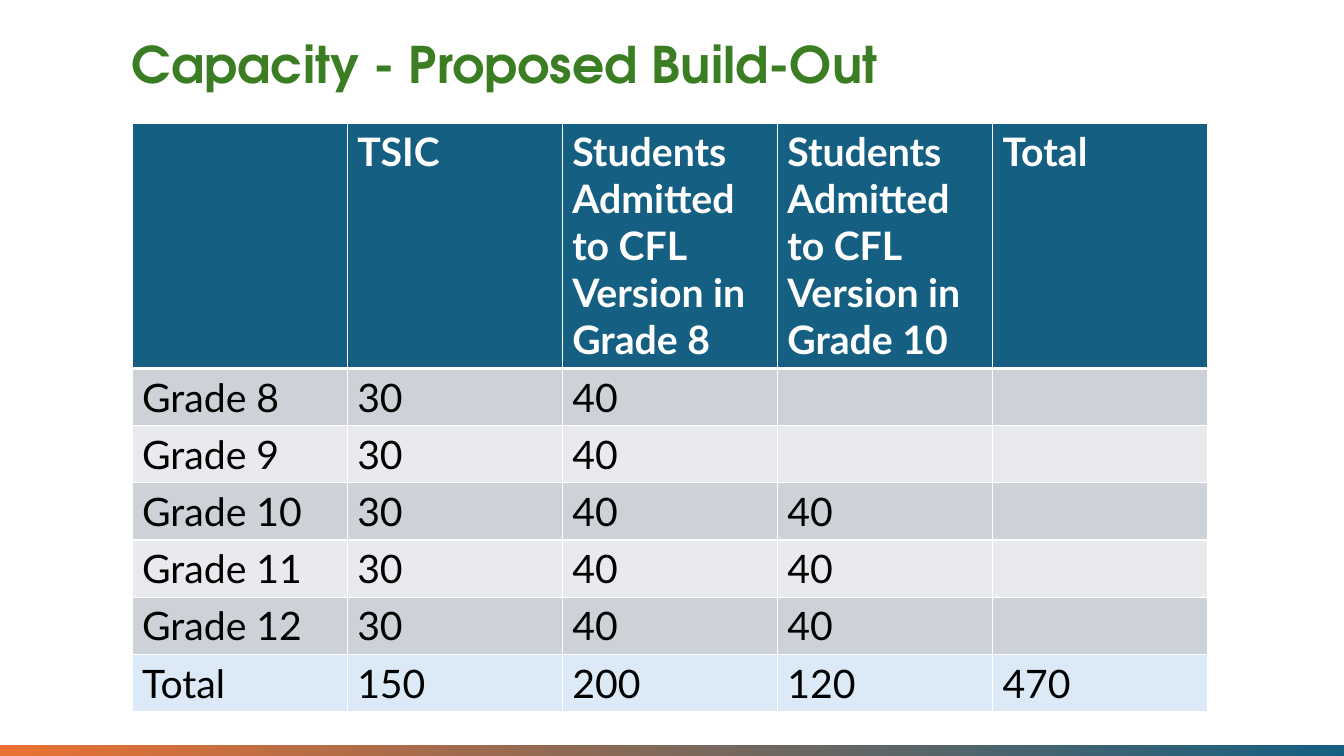
"""Build the capacity build-out slide."""
import dataclasses

import pptx
import pptx.dml.color
import pptx.enum.shapes
import pptx.enum.text
import pptx.oxml
import pptx.oxml.ns
import pptx.util

Cm = pptx.util.Cm
Pt = pptx.util.Pt


@dataclasses.dataclass(frozen=True)
class Theme:
    """Colours, fonts and sizes of the slide."""
    orange: str = "E97132"
    teal: str = "156082"
    green: str = "3B7D23"
    white: str = "FFFFFF"
    black: str = "000000"
    bands: tuple = ("CCD2D8", "E8EAED")
    total: str = "DCEAF7"
    title_font: str = "TeX Gyre Adventor"
    table_font: str = "Lato"
    title_size: int = 36
    table_size: int = 28
    thin: int = 1
    thick: int = 3


def rgb(value):
    """Return a colour from its hexadecimal value."""
    return pptx.dml.color.RGBColor.from_string(value)


class CapacitySlide:
    """Draw styled elements on one slide."""

    def __init__(self, slide, theme):
        """Keep the slide and its theme."""
        self.slide = slide
        self.theme = theme

    def style(self, text_frame, font_name, size, color, bold):
        """Format every run of a text frame."""
        for paragraph in text_frame.paragraphs:
            for run in paragraph.runs:
                run.font.name = font_name
                run.font.size = Pt(size)
                run.font.bold = bold
                run.font.color.rgb = rgb(color)

    def gradient_bar(self, left, top, width, height):
        """Add a bar that fades from orange to teal."""
        rectangle = pptx.enum.shapes.MSO_SHAPE.RECTANGLE
        shape = self.slide.shapes.add_shape(rectangle, left, top, width, height)
        shape.shadow.inherit = False
        shape.line.fill.background()
        shape.fill.gradient()
        shape.fill.gradient_angle = 0
        colors = (self.theme.orange, self.theme.teal)
        for stop, color in zip(shape.fill.gradient_stops, colors):
            stop.color.rgb = rgb(color)

    def title(self, text, left, top, width, height):
        """Add the slide title."""
        text_frame = self.slide.shapes.add_textbox(left, top, width, height).text_frame
        text_frame.word_wrap = True
        text_frame.vertical_anchor = pptx.enum.text.MSO_ANCHOR.TOP
        text_frame.text = text
        text_frame.paragraphs[0].line_spacing = 0.9
        self.style(text_frame, self.theme.title_font, self.theme.title_size,
                   self.theme.green, True)

    def borders(self, cell, top, bottom):
        """Set white borders with the given top and bottom widths."""
        properties = cell._tc.get_or_add_tcPr()
        widths = {"L": self.theme.thin, "R": self.theme.thin, "T": top, "B": bottom}
        for index, (side, width) in enumerate(widths.items()):
            border = pptx.oxml.parse_xml(
                f'<a:ln{side} {pptx.oxml.ns.nsdecls("a")} w="{Pt(width)}"><a:solidFill>'
                f'<a:srgbClr val="{self.theme.white}"/></a:solidFill></a:ln{side}>')
            properties.insert(index, border)

    def table(self, rows, left, top, column_width, header_height, row_height):
        """Add a banded table with a header row and a total row."""
        theme = self.theme
        last = len(rows) - 1
        columns = len(rows[0])
        table = self.slide.shapes.add_table(
            len(rows), columns, left, top, column_width * columns,
            header_height + row_height * last).table
        for column in table.columns:
            column.width = column_width
        for row_index, values in enumerate(rows):
            header = row_index == 0
            table.rows[row_index].height = header_height if header else row_height
            if header:
                fill = theme.teal
            elif row_index == last:
                fill = theme.total
            else:
                fill = theme.bands[(row_index - 1) % 2]
            for column_index, value in enumerate(values):
                cell = table.cell(row_index, column_index)
                cell.fill.solid()
                cell.fill.fore_color.rgb = rgb(fill)
                self.borders(cell, theme.thick if row_index == 1 else theme.thin,
                             theme.thick if header else theme.thin)
                if value:
                    cell.text_frame.text = value
                    self.style(cell.text_frame, theme.table_font, theme.table_size,
                               theme.white if header else theme.black, header)


def main():
    """Build and save the presentation."""
    presentation = pptx.Presentation()
    presentation.slide_width = Cm(33.87)
    presentation.slide_height = Cm(19.05)
    slide = presentation.slides.add_slide(presentation.slide_layouts[6])
    capacity = CapacitySlide(slide, Theme())
    capacity.gradient_bar(Cm(0), Cm(18.77), presentation.slide_width, Cm(0.48))
    capacity.title("Capacity - Proposed Build-Out", Cm(3.07), Cm(0.89), Cm(28.68), Cm(2.03))
    rows = [
        ("", "TSIC", "Students Admitted to CFL Version in Grade 8",
         "Students Admitted to CFL Version in Grade 10", "Total"),
        ("Grade 8", "30", "40", "", ""),
        ("Grade 9", "30", "40", "", ""),
        ("Grade 10", "30", "40", "40", ""),
        ("Grade 11", "30", "40", "40", ""),
        ("Grade 12", "30", "40", "40", ""),
        ("Total", "150", "200", "120", "470"),
    ]
    capacity.table(rows, Cm(3.33), Cm(3.1), Cm(5.42), Cm(6.18), Cm(1.44))
    presentation.save("out.pptx")


if __name__ == "__main__":
    main()
